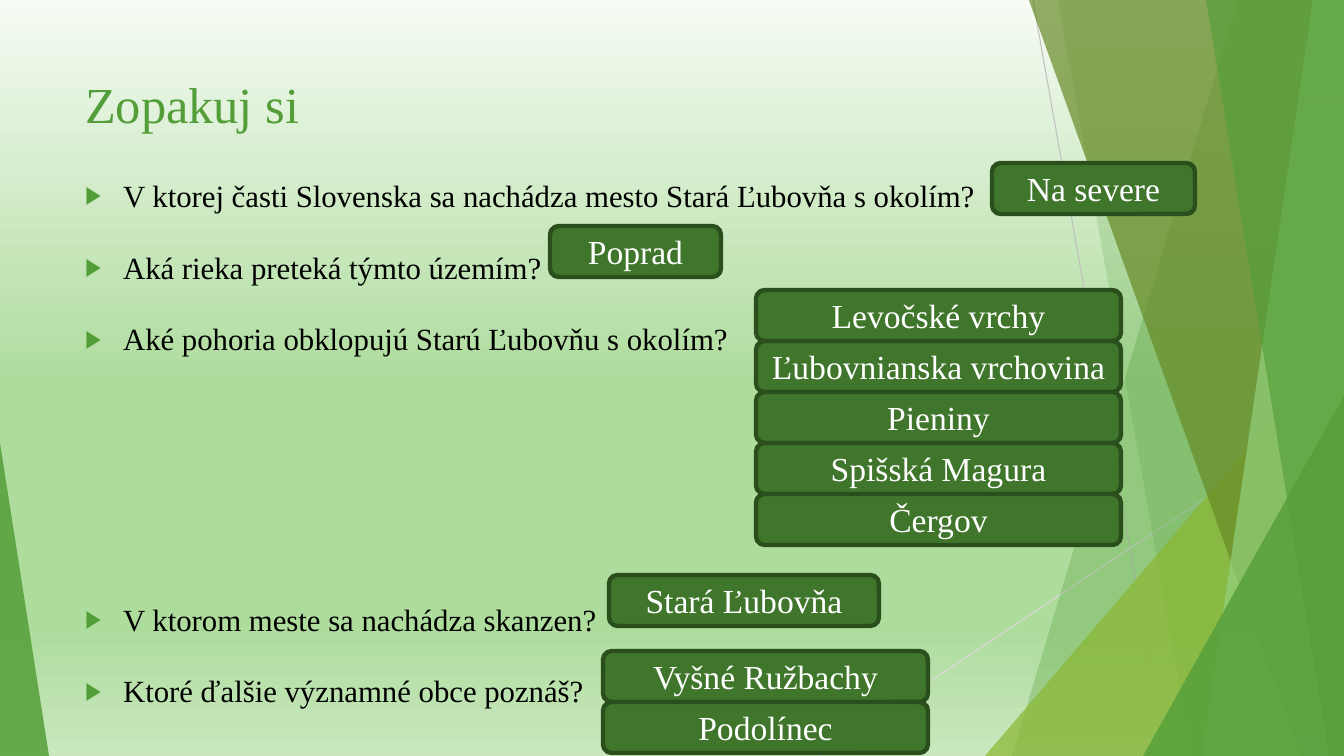
"""Build the review slide with questions and answer buttons."""
from lxml import etree
from pptx import Presentation
from pptx.dml.color import RGBColor
from pptx.enum import shapes, text
from pptx.oxml import ns
from pptx.util import Pt

TITLE = "Zopakuj si"
QUESTIONS = [
    ("V ktorej časti Slovenska sa nachádza mesto Stará Ľubovňa s okolím?", 0),
    ("Aká rieka preteká týmto územím?", 11.7),
    ("Aké pohoria obklopujú Starú Ľubovňu s okolím?", 11.7),
    ("V ktorom meste sa nachádza skanzen?", 160.6),
    ("Ktoré ďalšie významné obce poznáš?", 11.7),
]
ANSWERS = [
    (992, 163, 203, ["Na severe"]),
    (550, 226, 171, ["Poprad"]),
    (756, 290, 365, ["Levočské vrchy", "Ľubovnianska vrchovina", "Pieniny",
                     "Spišská Magura", "Čergov"]),
    (609, 575, 270, ["Stará Ľubovňa"]),
    (603, 651, 325, ["Vyšné Ružbachy", "Podolínec"]),
]

FONT = "Times New Roman"
GREEN = RGBColor(0x54, 0x9E, 0x39)
LIME = RGBColor(0x8A, 0xB8, 0x33)
OLIVE = RGBColor(0x67, 0x8A, 0x26)
PALE_GREEN = RGBColor(0x93, 0xD0, 0x7D)
BUTTON = RGBColor(0x3F, 0x76, 0x2B)
BUTTON_EDGE = RGBColor(0x2A, 0x4F, 0x1C)
GREY = RGBColor(0xBF, 0xBF, 0xBF)
LIGHT_GREY = RGBColor(0xD9, 0xD9, 0xD9)
WHITE = RGBColor(0xFF, 0xFF, 0xFF)
BLACK = RGBColor(0, 0, 0)
BACKGROUND = [(0, RGBColor(0xF6, 0xFB, 0xF4)), (51, RGBColor(0xAE, 0xDC, 0x9D)),
              (83, RGBColor(0xAE, 0xDC, 0x9D)), (100, RGBColor(0xC9, 0xE8, 0xBE))]

WIDTH, HEIGHT = 1344, 756
BUTTON_HEIGHT = 51
SCALE = 914400 / 100.8
RAYS = [((1033, 0), (1167, HEIGHT), GREY), ((WIDTH, 406), (818, HEIGHT), LIGHT_GREY)]
BANDS_BEHIND = [(1238, 1012, GREEN, 30), (1058, 1192, GREEN, 20)]
BANDS_FRONT = [(1029, 1301, OLIVE, 70), (1313, 1202, PALE_GREEN, 70),
               (1206, 1329, GREEN, 65)]
LIME_CORNER = (985, 336, 359, 1, LIME, 72)
SIDE_CORNERS = [(1143, 396, 201, 1, GREEN, 80), (0, 443, 49, 0, GREEN, 85)]


def px(*lengths):
    return [round(length * SCALE) for length in lengths]


def place(shape, *box):
    shape.left, shape.top, shape.width, shape.height = px(*box)


def paint(shape, color, opacity):
    shape.shadow.inherit = False
    shape.fill.solid()
    shape.fill.fore_color.rgb = color
    shape.line.fill.background()
    color_element = shape.fill._xPr.find(".//" + ns.qn("a:srgbClr"))
    etree.SubElement(color_element, ns.qn("a:alpha"), val=str(opacity * 1000))


def add_band(slide, top_x, bottom_x, color, opacity):
    builder = slide.shapes.build_freeform(top_x, 0, SCALE)
    builder.add_line_segments([(WIDTH, 0), (WIDTH, HEIGHT), (bottom_x, HEIGHT)])
    paint(builder.convert_to_shape(), color, opacity)


def add_corner(slide, left, top, width, apex, color, opacity):
    corner = slide.shapes.add_shape(shapes.MSO_SHAPE.ISOSCELES_TRIANGLE,
                                    *px(left, top, width, HEIGHT - top))
    corner.adjustments[0] = apex
    paint(corner, color, opacity)


def add_ray(slide, start, end, color):
    ray = slide.shapes.add_connector(shapes.MSO_CONNECTOR.STRAIGHT, *px(*start, *end))
    ray.line.color.rgb = color
    ray.line.width = Pt(0.75)
    etree.SubElement(ray._element.spPr, ns.qn("a:effectLst"))


def write(paragraph, content, size, color, align=text.PP_ALIGN.LEFT):
    paragraph.text = content
    paragraph.alignment = align
    paragraph.font.name = FONT
    paragraph.font.size = Pt(size)
    paragraph.font.color.rgb = color


def add_bullet(paragraph):
    properties = paragraph._p.get_or_add_pPr()
    indent = px(38)[0]
    properties.set("marL", str(indent))
    properties.set("indent", str(-indent))
    color = etree.SubElement(properties, ns.qn("a:buClr"))
    etree.SubElement(color, ns.qn("a:srgbClr"), val=str(GREEN))
    etree.SubElement(properties, ns.qn("a:buSzPct"), val="80000")
    etree.SubElement(properties, ns.qn("a:buChar"), char="▶")


def add_button(slide, content, left, top, width):
    button = slide.shapes.add_shape(shapes.MSO_SHAPE.ROUNDED_RECTANGLE,
                                    *px(left, top, width, BUTTON_HEIGHT))
    button.shadow.inherit = False
    button.fill.solid()
    button.fill.fore_color.rgb = BUTTON
    button.line.color.rgb = BUTTON_EDGE
    button.line.width = Pt(3.15)
    button.text_frame.vertical_anchor = text.MSO_ANCHOR.MIDDLE
    write(button.text_frame.paragraphs[0], content, 24, WHITE, text.PP_ALIGN.CENTER)


def fill_background(slide):
    fill = slide.background.fill
    fill.gradient()
    fill.gradient_angle = 270
    stops = slide._element.find(".//" + ns.qn("a:gsLst"))
    for stop in list(stops):
        stops.remove(stop)
    for position, color in BACKGROUND:
        stop = etree.SubElement(stops, ns.qn("a:gs"), pos=str(position * 1000))
        etree.SubElement(stop, ns.qn("a:srgbClr"), val=str(color))


def add_decoration(slide):
    for ray in RAYS:
        add_ray(slide, *ray)
    for band in BANDS_BEHIND:
        add_band(slide, *band)
    add_corner(slide, *LIME_CORNER)
    for band in BANDS_FRONT:
        add_band(slide, *band)
    for corner in SIDE_CORNERS:
        add_corner(slide, *corner)


def add_questions(slide):
    title, body = slide.placeholders
    place(title, 75, 68, 948, 145)
    place(body, 75, 153, 1150, 603)
    for placeholder in (title, body):
        slide.shapes._spTree.append(placeholder._element)
        placeholder.text_frame.vertical_anchor = text.MSO_ANCHOR.TOP
        placeholder.text_frame.auto_size = text.MSO_AUTO_SIZE.NONE
    write(title.text_frame.paragraphs[0], TITLE, 36, GREEN)
    frame = body.text_frame
    for index, (question, space) in enumerate(QUESTIONS):
        paragraph = frame.add_paragraph() if index else frame.paragraphs[0]
        add_bullet(paragraph)
        paragraph.line_spacing = 1.5
        paragraph.space_before = Pt(space)
        write(paragraph, question, 22, BLACK)


def main():
    presentation = Presentation()
    presentation.slide_width, presentation.slide_height = px(WIDTH, HEIGHT)
    slide = presentation.slides.add_slide(presentation.slide_layouts[1])
    fill_background(slide)
    add_decoration(slide)
    add_questions(slide)
    for left, top, width, names in ANSWERS:
        for row, name in enumerate(names):
            add_button(slide, name, left, top + row * BUTTON_HEIGHT, width)
    presentation.save("out.pptx")


if __name__ == "__main__":
    main()
